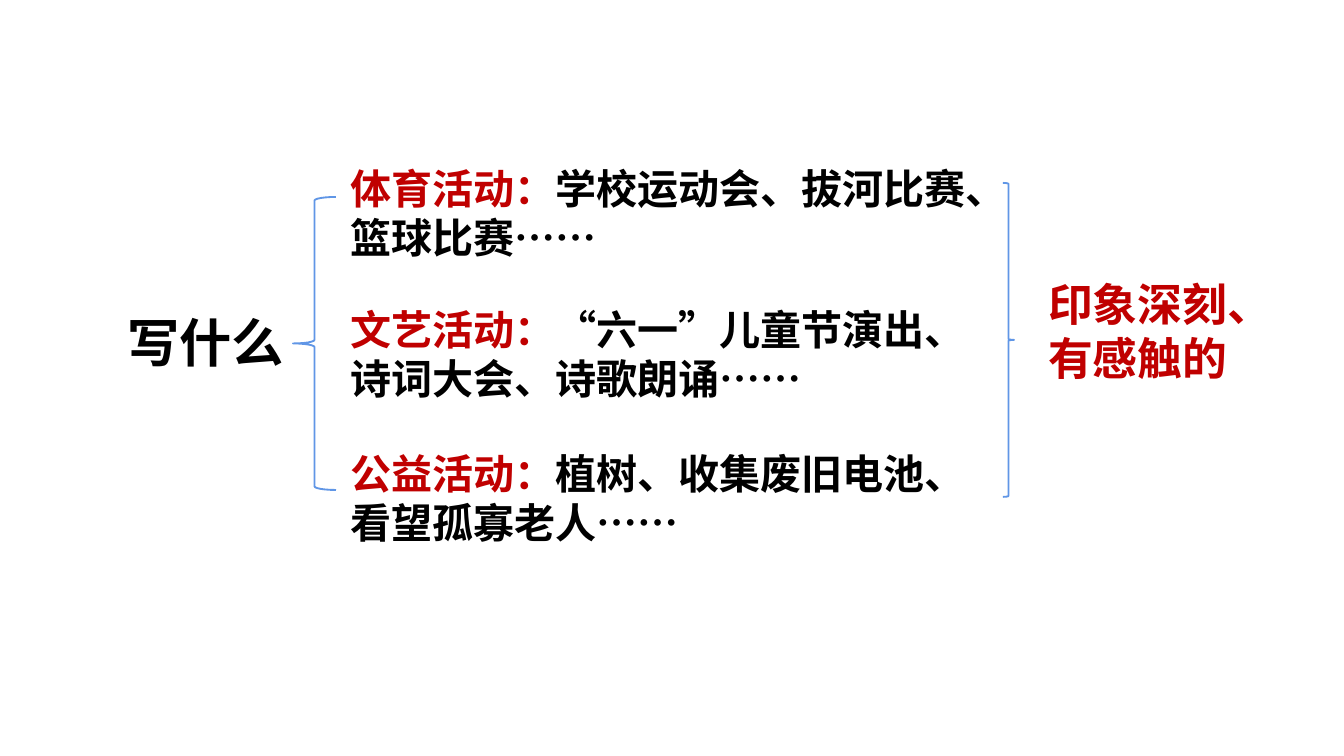
import pptx
import pptx.dml.color
import pptx.enum.lang
import pptx.enum.shapes
import pptx.enum.text
import pptx.oxml.ns
import pptx.util
from dataclasses import dataclass
from lxml import etree

RGB = pptx.dml.color.RGBColor.from_string
SHAPE = pptx.enum.shapes.MSO_SHAPE
EMU_PER_PX = 914400 / 134.4


@dataclass(frozen=True)
class Theme:
    font: str = "Noto Sans CJK SC"
    ink: str = "000000"
    accent: str = "C00000"
    line: str = "6096E6"
    topic_size: int = 28
    activity_size: int = 22
    conclusion_size: int = 24


def px(*lengths):
    return [pptx.util.Emu(round(n * EMU_PER_PX)) for n in lengths]


class SlideBuilder:
    def __init__(self, slide, theme):
        self.s = slide
        self.theme = theme

    def text(self, box, paragraphs, size, wrap=True):
        tf = self.s.shapes.add_textbox(*px(*box)).text_frame
        frame_format = {
            "word_wrap": wrap,
            "auto_size": pptx.enum.text.MSO_AUTO_SIZE.SHAPE_TO_FIT_TEXT,
        }
        for name, value in frame_format.items():
            setattr(tf, name, value)
        for i, runs in enumerate(paragraphs):
            p = tf.add_paragraph() if i else tf.paragraphs[0]
            for text, color in runs:
                self.run(p, text, color, size)

    def run(self, p, text, color, size):
        r = p.add_run()
        r.text = text
        font_format = {
            "name": self.theme.font,
            "size": pptx.util.Pt(size),
            "bold": True,
            "language_id": pptx.enum.lang.MSO_LANGUAGE_ID.SIMPLIFIED_CHINESE,
        }
        for name, value in font_format.items():
            setattr(r.font, name, value)
        r.font.color.rgb = RGB(color)
        ea = etree.SubElement(r.font._element, pptx.oxml.ns.qn("a:ea"))
        ea.set("typeface", self.theme.font)

    def brace(self, kind, box):
        sp = self.s.shapes.add_shape(kind, *px(*box))
        sp.shadow.inherit = False
        sp.fill.background()
        sp.line.color.rgb = RGB(self.theme.line)
        sp.line.width = pptx.util.Pt(1)


def main():
    prs = pptx.Presentation()
    prs.slide_width, prs.slide_height = px(1344, 756)
    theme = Theme()
    slide = SlideBuilder(prs.slides.add_slide(prs.slide_layouts[6]), theme)

    slide.text((114, 304, 184, 77), [[("写什么", theme.ink)]],
               theme.topic_size, wrap=False)

    activities = [
        (157, 657, "体育活动：", "学校运动会、拔河比赛、篮球比赛……"),
        (298, 657, "文艺活动：", "“六一”儿童节演出、诗词大会、诗歌朗诵……"),
        (442, 637, "公益活动：", "植树、收集废旧电池、看望孤寡老人……"),
    ]
    for top, width, label, examples in activities:
        slide.text((337, top, width, 113),
                   [[(label, theme.accent), (examples, theme.ink)]],
                   theme.activity_size)

    slide.text((1035, 270, 223, 122),
               [[(line, theme.accent)] for line in ("印象深刻、", "有感触的")],
               theme.conclusion_size)

    slide.brace(SHAPE.LEFT_BRACE, (293, 197, 43, 293))
    slide.brace(SHAPE.RIGHT_BRACE, (1003, 183, 11, 314))

    prs.save("out.pptx")


if __name__ == "__main__":
    main()
